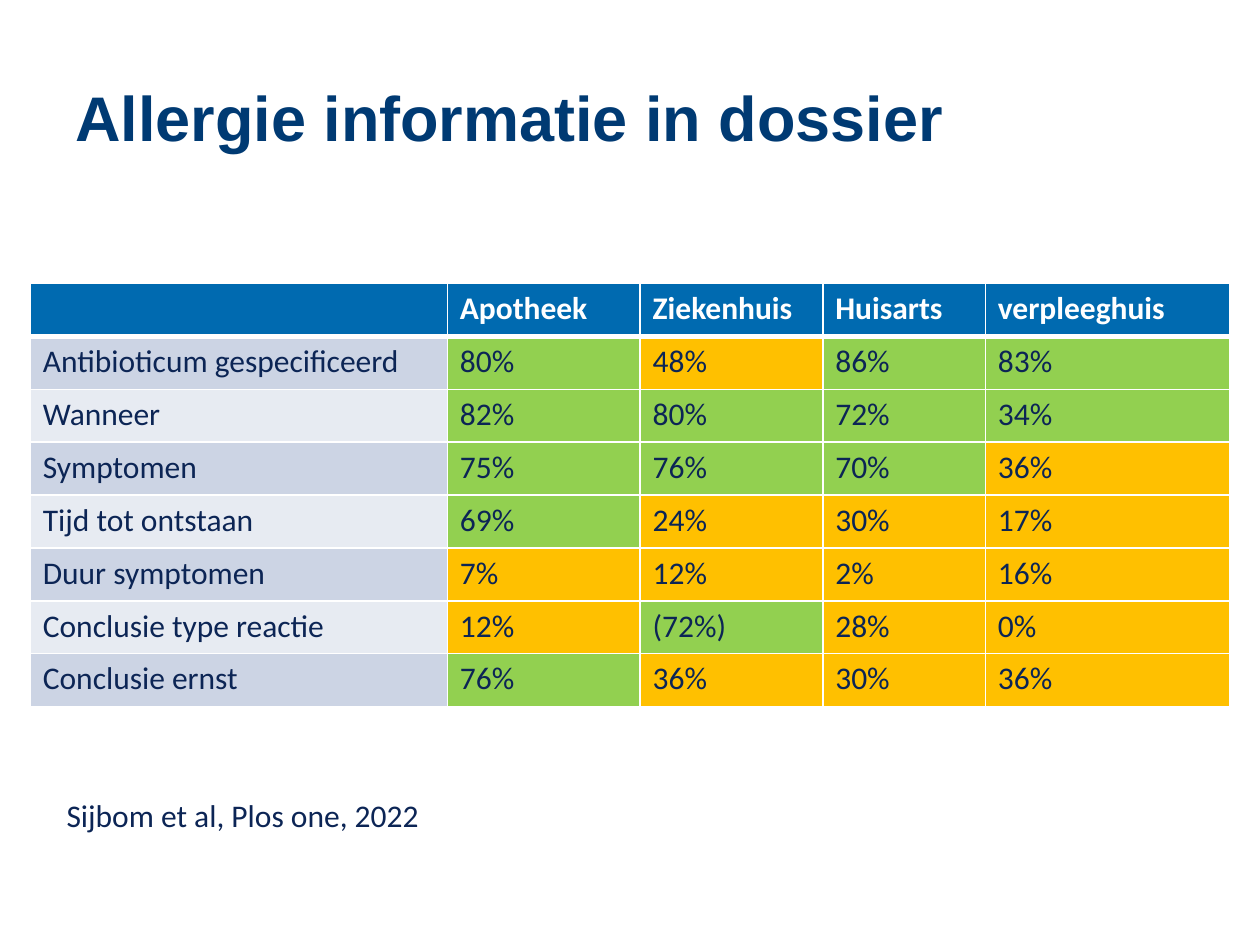
from lxml.etree import SubElement
from pptx import Presentation
from pptx.dml.color import RGBColor
from pptx.enum.text import MSO_ANCHOR
from pptx.oxml.ns import qn
from pptx.util import Inches, Pt

TITLE_BLUE = RGBColor(0x00, 0x3A, 0x73)
HEADER_BLUE = RGBColor(0x00, 0x6A, 0xB0)
NAVY = RGBColor(0x0C, 0x25, 0x55)
WHITE = RGBColor(0xFF, 0xFF, 0xFF)
BAND_DARK = RGBColor(0xCC, 0xD4, 0xE4)
BAND_LIGHT = RGBColor(0xE7, 0xEB, 0xF2)
GREEN = RGBColor(0x92, 0xD0, 0x50)
ORANGE = RGBColor(0xFF, 0xC0, 0x00)
RATING = {"G": GREEN, "O": ORANGE}


def write(frame, text, size, color, font="Calibri", bold=False):
    run = frame.paragraphs[0].add_run()
    run.text = text
    run.font.name = font
    run.font.size = Pt(size)
    run.font.bold = bold
    run.font.color.rgb = color


def add_borders(cell, top, bottom):
    properties = cell._tc.get_or_add_tcPr()
    for side, width in (("L", 1), ("R", 1), ("T", top), ("B", bottom)):
        line = SubElement(properties, qn(f"a:ln{side}"), w=str(Pt(width)))
        fill = SubElement(line, qn("a:solidFill"))
        SubElement(fill, qn("a:srgbClr"), val=str(WHITE))


prs = Presentation()
prs.slide_width, prs.slide_height = Inches(10), Inches(7.5)
slide = prs.slides.add_slide(prs.slide_layouts[6])

# Title
title = slide.shapes.add_textbox(Inches(0.5), Inches(0.3), Inches(9), Inches(1.25)).text_frame
title.word_wrap = True
title.vertical_anchor = MSO_ANCHOR.MIDDLE
write(title, "Allergie informatie in dossier", 36, TITLE_BLUE, "Arial", True)

# Share of files holding each item, with a rating (green or orange) per care setting
settings = ["", "Apotheek", "Ziekenhuis", "Huisarts", "verpleeghuis"]
items = [
    ("Antibioticum gespecificeerd", ["80%", "48%", "86%", "83%"], "GOGG"),
    ("Wanneer", ["82%", "80%", "72%", "34%"], "GGGG"),
    ("Symptomen", ["75%", "76%", "70%", "36%"], "GGGO"),
    ("Tijd tot ontstaan", ["69%", "24%", "30%", "17%"], "GOOO"),
    ("Duur symptomen", ["7%", "12%", "2%", "16%"], "OOOO"),
    ("Conclusie type reactie", ["12%", "(72%)", "28%", "0%"], "OGOO"),
    ("Conclusie ernst", ["76%", "36%", "30%", "36%"], "GOOO"),
]
rows = [(settings, [HEADER_BLUE] * len(settings))]
for i, (item, shares, ratings) in enumerate(items):
    band = BAND_LIGHT if i % 2 else BAND_DARK
    rows.append(([item] + shares, [band] + [RATING[r] for r in ratings]))

# Table
table = slide.shapes.add_table(len(rows), len(settings), Inches(0.24), Inches(2.25),
                               Inches(9.52), Inches(0.42 * len(rows))).table
for column, width in zip(table.columns, (3.31, 1.53, 1.45, 1.29, 1.94)):
    column.width = Inches(width)
for r, (texts, fills) in enumerate(rows):
    table.rows[r].height = Inches(0.42)
    for c, (text, fill) in enumerate(zip(texts, fills)):
        cell = table.cell(r, c)
        add_borders(cell, top=3 if r == 1 else 1, bottom=3 if r == 0 else 1)
        cell.fill.solid()
        cell.fill.fore_color.rgb = fill
        if text:
            write(cell.text_frame, text, 18, NAVY if r else WHITE, bold=r == 0)

# Source reference
reference = slide.shapes.add_textbox(Inches(0.43), Inches(6.27), Inches(3.23), Inches(0.4)).text_frame
reference.word_wrap = True
write(reference, "Sijbom et al, Plos one, 2022", 18, NAVY)

prs.save("out.pptx")
